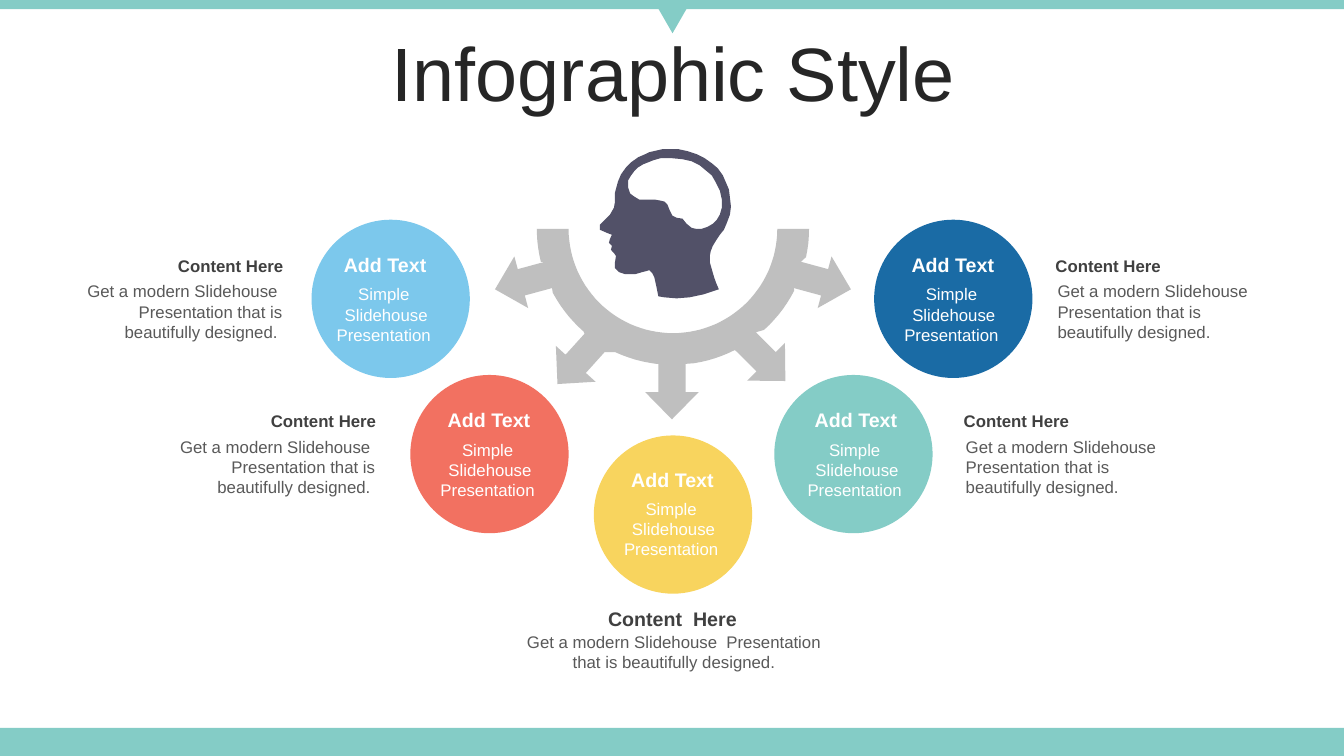
from math import atan2, cos, degrees, hypot, radians, sin

from pptx import Presentation
from pptx.dml.color import RGBColor
from pptx.enum.shapes import MSO_SHAPE as Preset
from pptx.enum.text import MSO_ANCHOR as Anchor, PP_ALIGN as Align
from pptx.util import Inches, Pt

TEAL = RGBColor(0x84, 0xCC, 0xC6)
YELLOW = RGBColor(0xF8, 0xD4, 0x5E)
CORAL = RGBColor(0xF2, 0x71, 0x61)
SKY = RGBColor(0x7C, 0xC8, 0xEC)
BLUE = RGBColor(0x1A, 0x6B, 0xA5)
SILVER = RGBColor(0xBF, 0xBF, 0xBF)
INDIGO = RGBColor(0x52, 0x51, 0x68)
WHITE = RGBColor(0xFF, 0xFF, 0xFF)
TITLE_INK = RGBColor(0x26, 0x26, 0x26)
HEADING_INK = RGBColor(0x40, 0x40, 0x40)
BODY_INK = RGBColor(0x59, 0x59, 0x59)

deck = Presentation()
deck.slide_width, deck.slide_height = Inches(13.33), Inches(7.5)
slide = deck.slides.add_slide(deck.slide_layouts[6])
shapes = slide.shapes

COLUMNS, ROWS = 133.3, 75
CELL = deck.slide_height / ROWS
FINE = 100


def paint(shape, color):
    shape.shadow.inherit = False
    shape.fill.solid()
    shape.fill.fore_color.rgb = color
    shape.line.fill.background()


def write(column, row, columns, rows, words, size, color,
          bold=False, align=Align.CENTER, anchor=Anchor.TOP):
    area = [int(n * CELL) for n in (column, row, columns, rows)]
    frame = shapes.add_textbox(*area).text_frame
    frame.word_wrap = True
    frame.vertical_anchor = anchor
    frame.text = words
    for paragraph in frame.paragraphs:
        paragraph.alignment = align
        for run in paragraph.runs:
            run.font.name = "Arial"
            run.font.size = Pt(size)
            run.font.bold = bold
            run.font.color.rgb = color
    return frame


for preset, column, row, columns, rows, turn in (
    (Preset.RECTANGLE, 0, 72.2, COLUMNS, 2.8, 0),
    (Preset.RECTANGLE, 0, 0, COLUMNS, 0.9, 0),
    (Preset.ISOSCELES_TRIANGLE, 64.8, 0, 3.8, 3.3, 180),
):
    band = shapes.add_shape(preset, *[int(n * CELL) for n in (column, row, columns, rows)])
    band.rotation = turn
    paint(band, TEAL)

title = write(3.5, 3.7, 126.6, 7.9, "Infographic Style", 54, TITLE_INK, anchor=Anchor.MIDDLE)
title.paragraphs[0].line_spacing = 0.9
title.paragraphs[0].space_before = Pt(10)

HUB_X, HUB_Y, OUTER, INNER, STEP = 66.75, 22.7, 13.5, 10.35, 3
SHAFT, HEAD = 1.35, 2.65
arrows = [
    (84.4, 28.7, 15),
    (77.9, 37.8, 45),
    (66.65, 41.6, 90),
    (55.3, 38.1, 132),
    (49.1, 28.7, 165),
]
ring = []
reached = 0
for tip_x, tip_y, angle in arrows:
    ux, uy = cos(radians(angle)), sin(radians(angle))
    arrow = [
        (tip_x - back * ux + side * uy, tip_y - back * uy - side * ux)
        for back, side in ((5.5, SHAFT), (2.7, SHAFT), (2.7, HEAD), (0, 0),
                           (2.7, -HEAD), (2.7, -SHAFT), (5.5, -SHAFT))
    ]
    entry, leave = [degrees(atan2(y - HUB_Y, x - HUB_X)) for x, y in (arrow[0], arrow[-1])]
    ring += [(HUB_X + OUTER * cos(radians(a)), HUB_Y + OUTER * sin(radians(a)))
             for a in range(reached, int(entry), STEP)]
    ring += arrow
    reached = int(leave) + 1
ring += [(HUB_X + OUTER * cos(radians(a)), HUB_Y + OUTER * sin(radians(a)))
         for a in [*range(reached, 180, STEP), 180]]
ring += [(HUB_X + INNER * cos(radians(a)), HUB_Y + INNER * sin(radians(a)))
         for a in range(180, -1, -STEP)]

brain = [
    (66.1, 15.7), (65.5, 15.7), (64.8, 15.9), (64.3, 16.1), (63.8, 16.3), (63.3, 16.6),
    (62.9, 17), (62.6, 17.4), (62.3, 17.9), (62.3, 18.6), (62.5, 19.2), (62.9, 19.5),
    (63.4, 19.8), (64.1, 19.8), (64.9, 19.8), (65.5, 19.9), (65.9, 20), (66.2, 20.3),
    (66.4, 20.8), (66.7, 21.4), (67.1, 21.6), (67.7, 21.7), (68.1, 22.2), (68.6, 22.6),
    (69, 22.7), (69.6, 22.7), (70.2, 22.5), (70.7, 22.2), (71.1, 21.8), (71.4, 21.3),
    (71.6, 20.6), (71.6, 19.8), (71.4, 18.9), (71, 18.1), (70.6, 17.4), (70, 16.9),
    (69.4, 16.4), (68.6, 16), (67.7, 15.8), (66.7, 15.7),
]
profile = [
    (66.2, 14.8), (67.3, 14.8), (68.2, 15), (69.1, 15.3), (69.9, 15.7), (70.6, 16.2),
    (71.2, 16.7), (71.7, 17.4), (72, 18.1), (72.3, 18.8), (72.4, 19.6), (72.5, 20.5),
    (72.4, 21.3), (72.1, 22.1), (71.8, 22.8), (71.4, 23.3), (71, 23.9), (70.7, 24.4),
    (70.5, 24.9), (70.4, 25.4), (70.4, 26), (70.6, 26.7), (70.8, 27.4), (71, 28),
    (71.3, 28.7), (69.8, 29.2), (68.4, 29.5), (67.1, 29.6), (65.9, 29.5), (65.3, 29.4),
    (65.1, 28.4), (64.9, 27.5), (64.7, 27.1), (64.4, 26.8), (64.1, 26.9), (63.7, 27),
    (63, 27.2), (62, 27.2), (61.4, 27), (61, 26.6), (61, 26), (61.1, 25.4),
    (60.9, 25.1), (60.6, 24.8), (60.7, 24.4), (60.4, 24.1), (60.5, 23.7), (60.7, 23.3),
    (60.2, 23.1), (59.5, 22.8), (59.5, 22.3), (60, 21.8), (60.5, 21.3), (60.9, 20.6),
    (61, 20), (61, 19.1), (61.3, 18), (61.6, 17.3), (62.1, 16.6), (62.6, 16.1),
    (63.3, 15.6), (64, 15.3), (64.4, 15.1), (65.7, 14.8),
]
for contours, color in (([ring], SILVER), ([brain, profile], INDIGO)):
    builder = None
    for contour in contours:
        points = [(x * FINE, y * FINE) for x, y in contour]
        if builder is None:
            builder = shapes.build_freeform(*points[0], scale=CELL / FINE)
        else:
            builder.move_to(*points[0])
        builder.add_line_segments(points[1:], close=True)
    paint(builder.convert_to_shape(), color)

DIAMETER = 15.7
for column, row, label_column, label_row, color in (
    (58.9, 43.2, 60.1, 45.9, YELLOW),
    (40.7, 37.2, 41.9, 40, CORAL),
    (30.9, 21.8, 31.6, 24.6, SKY),
    (76.8, 37.2, 78.3, 40, TEAL),
    (86.7, 21.8, 87.9, 24.6, BLUE),
):
    disc = shapes.add_shape(Preset.OVAL, *[int(n * CELL) for n in (column, row, DIAMETER, DIAMETER)])
    paint(disc, color)
    write(label_column, label_row, 13.2, 3.4, "Add Text", 14, WHITE, bold=True)
    write(label_column + 0.1, label_row + 3.1, 13.2, 7.1,
          "Simple \nSlidehouse Presentation ", 12, WHITE)

PITCH = "Get a modern Slidehouse  Presentation that is beautifully designed."
for column, row, align, pitch in (
    (7, 24.9, Align.RIGHT, PITCH + " "),
    (16.2, 40.3, Align.RIGHT, PITCH + " "),
    (103.7, 24.9, Align.LEFT, PITCH),
    (94.6, 40.3, Align.LEFT, PITCH),
):
    write(column, row, 22.1, 3, "Content Here", 12, HEADING_INK, bold=True, align=align)
    write(column + 0.2, row + 2.5, 21.8, 7.1, pitch, 12, BODY_INK, align=align)

write(49.7, 59.7, 34, 3.4, "Content  Here", 14, HEADING_INK, bold=True, anchor=Anchor.MIDDLE)
write(49.9, 62.2, 33.9, 5, PITCH, 12, BODY_INK)

deck.save("out.pptx")
